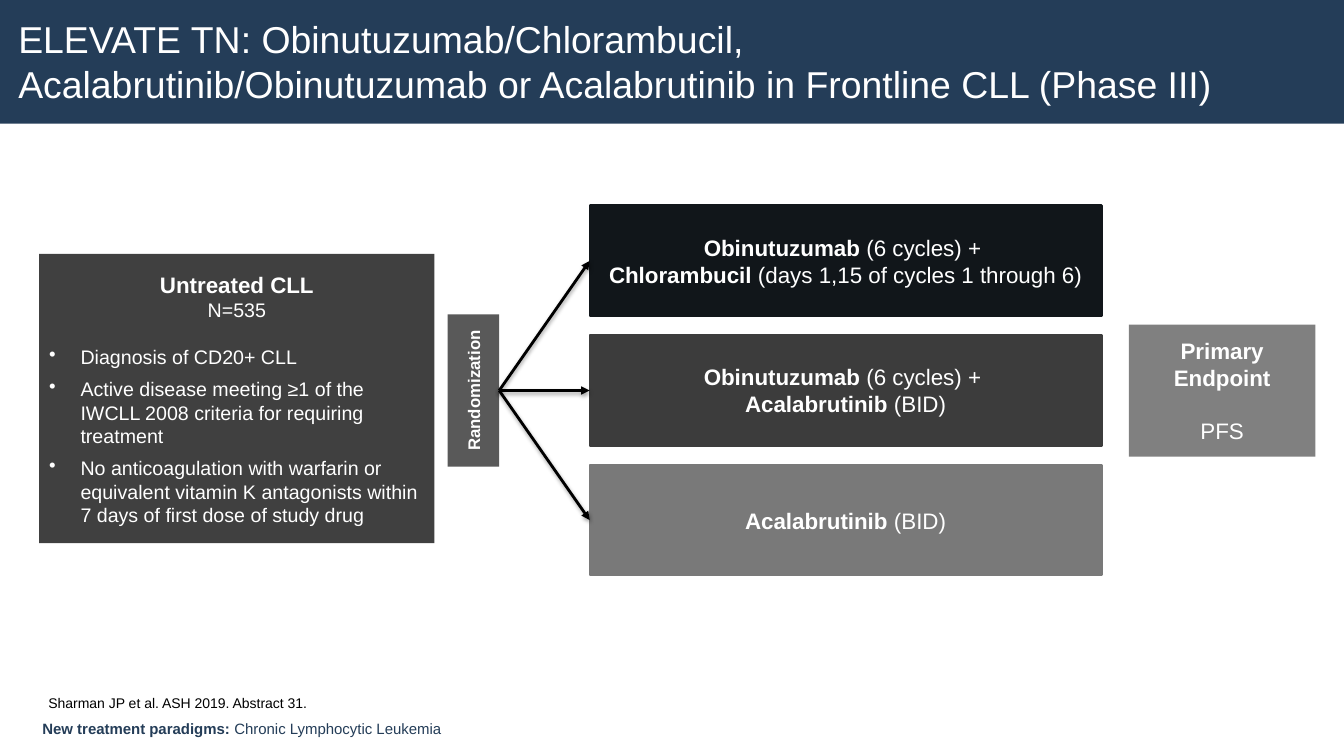
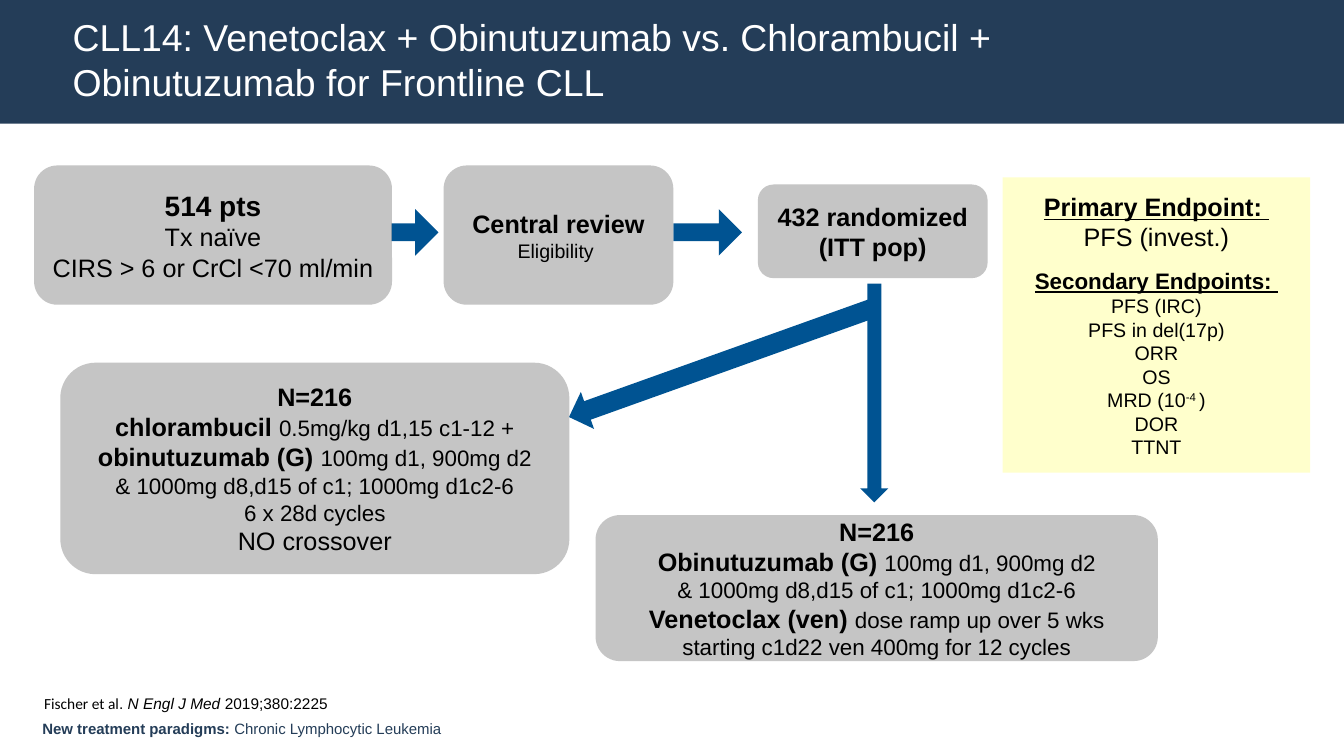
from collections import namedtuple

from lxml.etree import SubElement
from pptx import Presentation
from pptx.dml.color import RGBColor
from pptx.enum.shapes import MSO_CONNECTOR as Connector, MSO_SHAPE as Preset
from pptx.enum.text import MSO_ANCHOR as Anchor, MSO_AUTO_SIZE as AutoSize, PP_ALIGN as Align
from pptx.oxml.ns import qn
from pptx.util import Cm, Pt

COLORS = {
    "navy": "243D58", "white": "FFFFFF", "black": "000000", "blue": "005392",
    "ink": "11161A", "charcoal": "3C3C3C", "stone": "797979", "card": "404040",
    "random": "595959", "endpoint": "808080", "step": "AFAFAF", "cream": "FFFFCC",
}
FONT = "Arial"

# Styles: b bold, i italic, u underlined, s superscript
Span = namedtuple("Span", "text size style font", defaults=("", FONT))
Line = namedtuple("Line", "spans before after bullet", defaults=(0, 0, False))
Box = namedtuple("Box", "left top width height")


def color(name):
    return RGBColor.from_string(COLORS[name])


def inside(region, left, top, width, height):
    return Box(region.left + left, region.top + top, width, height)


def lengths(box):
    return [Cm(value) for value in box]


def line(text, size, style="", **spacing):
    return Line([Span(text, size, style)], **spacing)


# Text
def add_bullet(para, indent=0.79):
    props = para._p.get_or_add_pPr()
    props.set("marL", str(Cm(indent)))
    props.set("indent", str(-Cm(indent)))
    SubElement(props, qn("a:buChar"), char="•")


def write(frame, lines, ink, align=Align.CENTER):
    frame.word_wrap = True
    for index, item in enumerate(lines):
        para = frame.paragraphs[0] if index == 0 else frame.add_paragraph()
        if item.bullet:
            add_bullet(para)
        para.alignment = Align.LEFT if item.bullet else align
        para.space_before, para.space_after = Pt(item.before), Pt(item.after)
        for piece in item.spans:
            span = para.add_run()
            span.text = piece.text
            font = span.font
            font.name, font.size = piece.font, Pt(piece.size)
            font.color.rgb = color(ink)
            font.bold, font.italic = "b" in piece.style, "i" in piece.style
            font.underline = "u" in piece.style
            if "s" in piece.style:
                font._element.set("baseline", "30000")


def add_text(page, box, lines, ink):
    text_box = page.shapes.add_textbox(*lengths(box))
    write(text_box.text_frame, lines, ink, Align.LEFT)
    return text_box


# Shapes
def add_panel(page, box, fill, lines=(), ink="white", preset=Preset.RECTANGLE,
              outline=False, opacity=None):
    panel = page.shapes.add_shape(preset, *lengths(box))
    panel.shadow.inherit = False
    panel.fill.solid()
    panel.fill.fore_color.rgb = color(fill)
    if outline:
        panel.line.color.rgb = color(fill)
        panel.line.width = Pt(1.5)
    else:
        panel.line.fill.background()
    if opacity:
        tint = panel._element.spPr.find(f"{qn('a:solidFill')}/{qn('a:srgbClr')}")
        SubElement(tint, qn("a:alpha"), val=str(opacity * 1000))
    panel.text_frame.vertical_anchor = Anchor.MIDDLE
    write(panel.text_frame, lines, ink)
    return panel


def add_step(page, box, lines):
    add_panel(page, box, "step", lines, "black", Preset.ROUNDED_RECTANGLE, opacity=72)


def add_arrow_line(page, start, end):
    arrow = page.shapes.add_connector(
        Connector.STRAIGHT, *[Cm(value) for value in (*start, *end)])
    arrow.line.color.rgb = color("black")
    arrow.line.width = Pt(2)
    props = arrow._element.spPr
    SubElement(props.find(qn("a:ln")), qn("a:tailEnd"), type="triangle")
    effects = SubElement(props, qn("a:effectLst"))
    shadow = SubElement(effects, qn("a:outerShdw"), blurRad="40000", dist="20000",
                        dir="5400000", rotWithShape="0")
    tint = SubElement(shadow, qn("a:srgbClr"), val=COLORS["black"])
    SubElement(tint, qn("a:alpha"), val="38000")


# Shared frame of the slides
def brand_layout(page):
    """Draw the band and the footer, then hand them to the page's layout."""
    band = add_panel(page, Box(0, -0.08, 33.87, 3.2), "navy")
    footer = add_text(page, Box(1.07, 17.65, 13.3, 1.4), [Line([
        Span("New treatment paradigms: ", 10.7, "b"),
        Span("Chronic Lymphocytic Leukemia", 10.7)])], "navy")
    frame = footer.text_frame
    frame.vertical_anchor = Anchor.MIDDLE
    frame.margin_left = 0
    for part in (band, footer):
        page.slide_layout.shapes._spTree.append(part._element)


def add_page(deck, title_text, title_box, source_box, source):
    page = deck.slides.add_slide(deck.slide_layouts[5])
    if len(deck.slides) == 1:
        brand_layout(page)
    title = page.shapes.title
    title.left, title.top, title.width, title.height = lengths(title_box)
    frame = title.text_frame
    frame.auto_size = AutoSize.NONE
    frame.vertical_anchor = Anchor.MIDDLE
    frame.margin_left, frame.margin_right = 0, Cm(0.3)
    write(frame, [line(title_text, 26.7)], "white", Align.LEFT)
    add_text(page, source_box, [Line(source)], "black")
    return page


# Slide 1: randomized trial with three arms
def population_card(page, box):
    criteria = [
        "Diagnosis of CD20+ CLL",
        "Active disease meeting ≥1 of the IWCLL 2008 criteria for requiring treatment",
        "No anticoagulation with warfarin or equivalent vitamin K antagonists "
        "within 7 days of first dose of study drug",
    ]
    lines = [line("Untreated CLL", 16, "b"), line("N=535", 14, after=17)]
    lines += [line(text, 14, after=6, bullet=True) for text in criteria]
    add_panel(page, box, "card", lines)


def randomization_bar(page, box):
    """Turn the bar a quarter so that its text reads upward."""
    shift = (box.height - box.width) / 2
    turned = Box(box.left - shift, box.top + shift, box.height, box.width)
    bar = add_panel(page, turned, "random", [line("Randomization", 12, "b")])
    bar.rotation = 270


def treatment_arms(page, box, origin):
    arms = [
        ("ink", [("Obinutuzumab ", "(6 cycles) + "),
                 ("Chlorambucil ", "(days 1,15 of cycles 1 through 6)")]),
        ("charcoal", [("Obinutuzumab ", "(6 cycles) + "), ("Acalabrutinib ", "(BID)")]),
        ("stone", [("Acalabrutinib ", "(BID)")]),
    ]
    height = 2.79
    pitch = (box.height - height) / (len(arms) - 1)
    for index, (fill, drugs) in enumerate(arms):
        lines = [Line([Span(drug, 16, "b"), Span(dose, 16)]) for drug, dose in drugs]
        arm = inside(box, 0, index * pitch, box.width, height)
        add_panel(page, arm, fill, lines, outline=True)
        add_arrow_line(page, origin, (arm.left, arm.top + height / 2))


def three_arm_trial(page, region):
    middle = region.height / 2
    population_card(page, inside(region, 0, 1.22, 9.96, 7.29))
    bar = inside(region, 10.29, middle - 1.92, 1.3, 3.84)
    randomization_bar(page, bar)
    treatment_arms(page, inside(region, 13.87, 0, 12.9, region.height),
                   (bar.left + bar.width, region.top + middle))
    add_panel(page, inside(region, 27.46, middle - 1.66, 4.7, 3.33), "endpoint",
              [line("Primary Endpoint", 16, "b"), line("PFS", 16, before=19)])


# Slide 2: patient flow into two arms
def endpoint_list(page, box):
    lines = [
        line("Primary Endpoint: ", 18, "bu"),
        line("PFS (invest.)", 18),
        line("Secondary Endpoints: ", 16, "bu", before=11),
    ]
    lines += [line(text, 14) for text in ("PFS (IRC)", "PFS in del(17p)", "ORR", "OS")]
    lines.append(Line([Span("MRD (10", 14), Span("-4 ", 14, "s"), Span(")", 14)]))
    lines += [line(text, 14) for text in ("DOR", "TTNT")]
    add_panel(page, box, "cream", lines, "black")


def flow_arrows(page, region):
    for left, width in ((9, 1.19), (16.11, 1.73)):
        arrow = add_panel(page, inside(region, left, 1.1, width, 1.17), "blue",
                          preset=Preset.RIGHT_ARROW)
        arrow.adjustments[0] = 0.38
    add_panel(page, inside(region, 20.82, 2.98, 0.71, 5.51), "blue",
              preset=Preset.DOWN_ARROW)
    branch = add_panel(page, inside(region, 13.24, 4.47, 8.15, 0.99), "blue",
                       preset=Preset.RIGHT_ARROW)
    branch.rotation = 160.3


def two_arm_flow(page, region):
    flow_arrows(page, region)
    dosing = "& 1000mg d8,d15 of c1; 1000mg d1c2-6"
    steps = [
        ((0, 0, 9.02, 3.51), [
            line("514 pts", 20, "b"), line("Tx naïve", 18),
            line("CIRS > 6 or CrCl <70 ml/min", 18)]),
        ((10.32, 0, 5.79, 3.51), [
            line("Central review", 18, "b"), line("Eligibility ", 14)]),
        ((18.24, 0.48, 5.79, 2.36), [
            line("432 randomized", 18, "b"), line("(ITT pop)", 18, "b")]),
        ((0.66, 4.97, 12.83, 5.33), [
            line("N=216", 18, "b"),
            Line([Span("chlorambucil ", 18, "b"), Span("0.5mg/kg d1,15 c1-12 +", 16)]),
            Line([Span("obinutuzumab (G) ", 18, "b"), Span("100mg d1, 900mg d2", 16)]),
            line(dosing, 16), line("6 x 28d cycles", 16), line("NO crossover", 18)]),
        ((14.15, 8.81, 14.17, 3.68), [
            line("N=216", 18, "b"),
            Line([Span("Obinutuzumab (G) ", 18, "b"), Span("100mg d1, 900mg d2", 16)]),
            line(dosing, 16),
            Line([Span("Venetoclax (ven) ", 18, "b"),
                  Span("dose ramp up over 5 wks starting c1d22 ven 400mg "
                       "for 12 cycles", 16)])]),
    ]
    for place, lines in steps:
        add_step(page, inside(region, *place), lines)
    endpoint_list(page, inside(region, 24.41, 0.3, 7.75, 7.44))


def main():
    deck = Presentation()
    deck.slide_width, deck.slide_height = Cm(33.87), Cm(19.05)

    page = add_page(
        deck, "ELEVATE TN: Obinutuzumab/Chlorambucil, Acalabrutinib/Obinutuzumab "
        "or Acalabrutinib in Frontline CLL (Phase III)", Box(0.46, -0.05, 30.6, 3.18),
        Box(0.97, 17.37, 23.16, 0.79),
        [Span("Sharman JP et al. ASH 2019. Abstract 31.", 10)])
    three_arm_trial(page, Box(0.99, 5.18, 32.16, 9.32))

    page = add_page(
        deck, "CLL14: Venetoclax + Obinutuzumab vs. Chlorambucil + "
        "Obinutuzumab for Frontline CLL", Box(1.83, 0.08, 27.4, 2.82),
        Box(0.86, 17.37, 9, 0.74),
        [Span("Fischer et al", 11, font="Calibri"), Span(". ", 11),
         Span("N Engl J Med ", 11, "i"), Span("2019;380:2225", 11)])
    two_arm_flow(page, Box(0.86, 4.17, 32.16, 12.49))

    deck.save("out.pptx")


if __name__ == "__main__":
    main()
